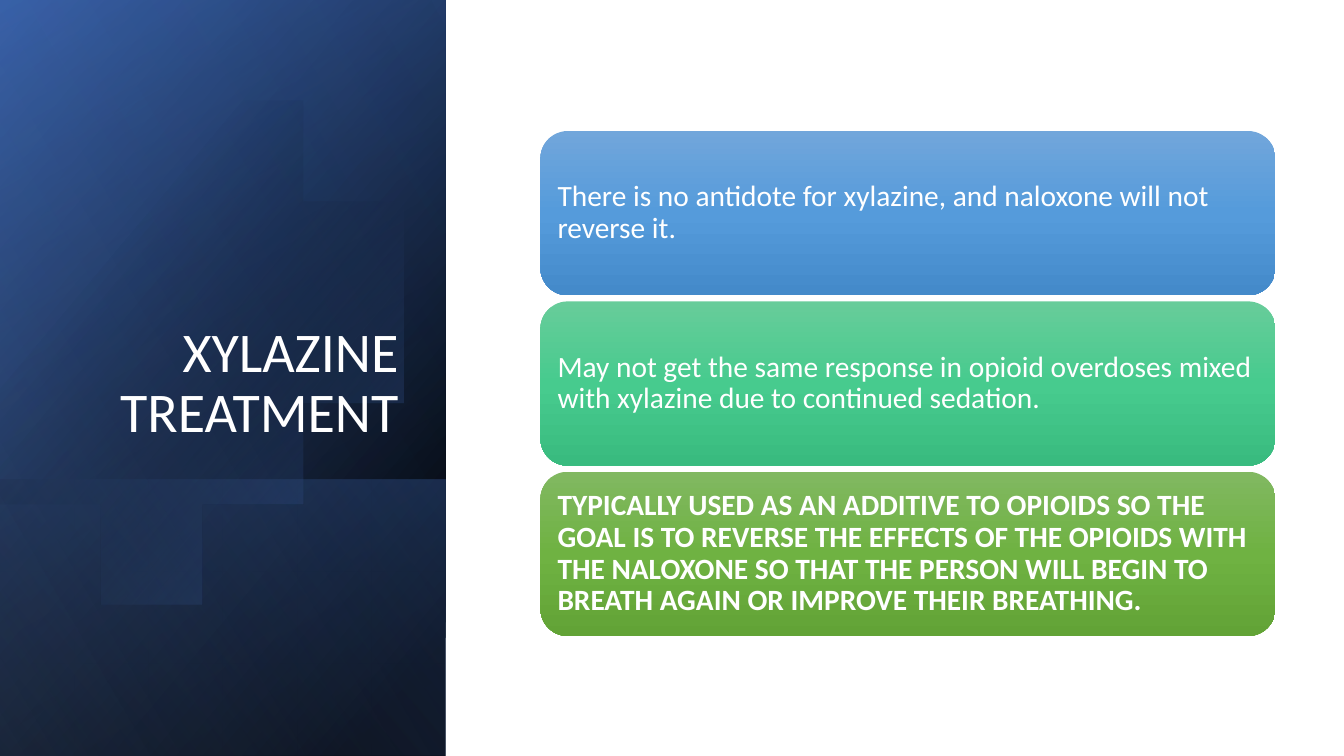
"""Build the xylazine treatment slide: a dark title panel beside three cards."""
from math import cos, radians, sin

from lxml.etree import SubElement
from pptx import Presentation
from pptx.dml.color import RGBColor
from pptx.enum.shapes import MSO_SHAPE
from pptx.enum.text import MSO_ANCHOR, PP_ALIGN
from pptx.oxml.ns import qn
from pptx.util import Inches, Pt

WHITE = RGBColor(0xFF, 0xFF, 0xFF)
BLACK = RGBColor(0x00, 0x00, 0x00)
BLUE = RGBColor(0x44, 0x72, 0xC4)
NAVY = RGBColor(0x2F, 0x55, 0x97)
PALE = RGBColor(0x8F, 0xAA, 0xDC)
SKY = [RGBColor(0x71, 0xA6, 0xDB), RGBColor(0x55, 0x9B, 0xDB), RGBColor(0x44, 0x8A, 0xCA)]
MINT = [RGBColor(0x67, 0xCC, 0x9A), RGBColor(0x47, 0xCB, 0x8E), RGBColor(0x39, 0xBB, 0x7F)]
LEAF = [RGBColor(0x81, 0xB8, 0x61), RGBColor(0x6F, 0xB2, 0x42), RGBColor(0x62, 0xA3, 0x36)]

WIDE, HIGH = 13.33, 7.5
SIDE = 4.42


def shade(shape, stops, angle):
    """Fill a shape with (position, colour, opacity) stops, without line or shadow."""
    shape.shadow.inherit = False
    shape.line.fill.background()
    shape.fill.gradient()
    grad = shape.fill._fill._gradFill
    items = grad.find(qn("a:gsLst"))
    for old in list(items):
        items.remove(old)
    for pos, tint, alpha in stops:
        stop = SubElement(items, qn("a:gs"), pos=str(pos * 1000))
        color = SubElement(stop, qn("a:srgbClr"), val=str(tint))
        if alpha < 100:
            SubElement(color, qn("a:alpha"), val=str(alpha * 1000))
    grad.find(qn("a:lin")).set("ang", str(angle * 60000))


def write(frame, text, size, bold=False):
    """Put one white run in a wrapped frame and return its paragraph."""
    frame.word_wrap = True
    para = frame.paragraphs[0]
    para.line_spacing = 0.9
    run = para.add_run()
    run.text = text
    run.font.name = "Calibri"
    run.font.size = Pt(size)
    run.font.bold = bold
    run.font.color.rgb = WHITE
    return para


deck = Presentation()
deck.slide_width, deck.slide_height = Inches(WIDE), Inches(HIGH)
slide = deck.slides.add_slide(deck.slide_layouts[6])
shapes = slide.shapes

mid_x, mid_y, radius = 1.45, 3.38, 2.28
arc = [(mid_x + radius * cos(radians(deg)), mid_y + radius * sin(radians(deg)))
       for deg in range(-129, 130, 3)]

panels = [
    (0, [(8, BLACK, 100), (100, NAVY, 100)], 50),
    (0, [(0, BLACK, 0), (99, BLUE, 46)], 30),
    (HIGH - 2.74, [(2, BLUE, 29), (100, BLACK, 30)], 130),
    (None, [(29, BLACK, 0), (100, BLUE, 43)], 40),
    (0, [(0, BLACK, 0), (99, PALE, 11)], 120),
]
for top, stops, angle in panels:
    if top is None:
        pen = shapes.build_freeform(*arc[0], scale=Inches(1))
        pen.add_line_segments(arc[1:])
        panel = pen.convert_to_shape()
    else:
        tall = HIGH - top
        panel = shapes.add_shape(
            MSO_SHAPE.RECTANGLE, Inches((SIDE - tall) / 2),
            Inches(top + (tall - SIDE) / 2), Inches(tall), Inches(SIDE))
        panel.rotation = 90
        panel._element.spPr.find(qn("a:xfrm")).set("flipH", "1")
    shade(panel, stops, angle)

title = shapes.add_textbox(Inches(0.64), Inches(1.84), Inches(3.41), Inches(2.62)).text_frame
title.vertical_anchor = MSO_ANCHOR.BOTTOM
write(title, "XYLAZINE TREATMENT", 40).alignment = PP_ALIGN.RIGHT

cards = [
    (SKY, False, "There is no antidote for xylazine, and naloxone will not reverse it."),
    (MINT, False, "May not get the same response in opioid overdoses mixed with xylazine "
                  "due to continued sedation."),
    (LEAF, True, "TYPICALLY USED AS AN ADDITIVE TO OPIOIDS SO THE GOAL IS TO REVERSE THE "
                 "EFFECTS OF THE OPIOIDS WITH THE NALOXONE SO THAT THE PERSON WILL BEGIN TO "
                 "BREATH AGAIN OR IMPROVE THEIR BREATHING."),
]
for row, (tints, bold, text) in enumerate(cards):
    card = shapes.add_shape(MSO_SHAPE.ROUNDED_RECTANGLE, Inches(5.36),
                            Inches(1.3 + row * 1.69), Inches(7.29), Inches(1.63))
    shade(card, [(50 * step, tint, 100) for step, tint in enumerate(tints)], 90)
    frame = card.text_frame
    frame.vertical_anchor = MSO_ANCHOR.MIDDLE
    frame.margin_left = frame.margin_right = Inches(0.09)
    frame.margin_top = frame.margin_bottom = Inches(0.09)
    write(frame, text, 21, bold).alignment = PP_ALIGN.LEFT

deck.save("out.pptx")
